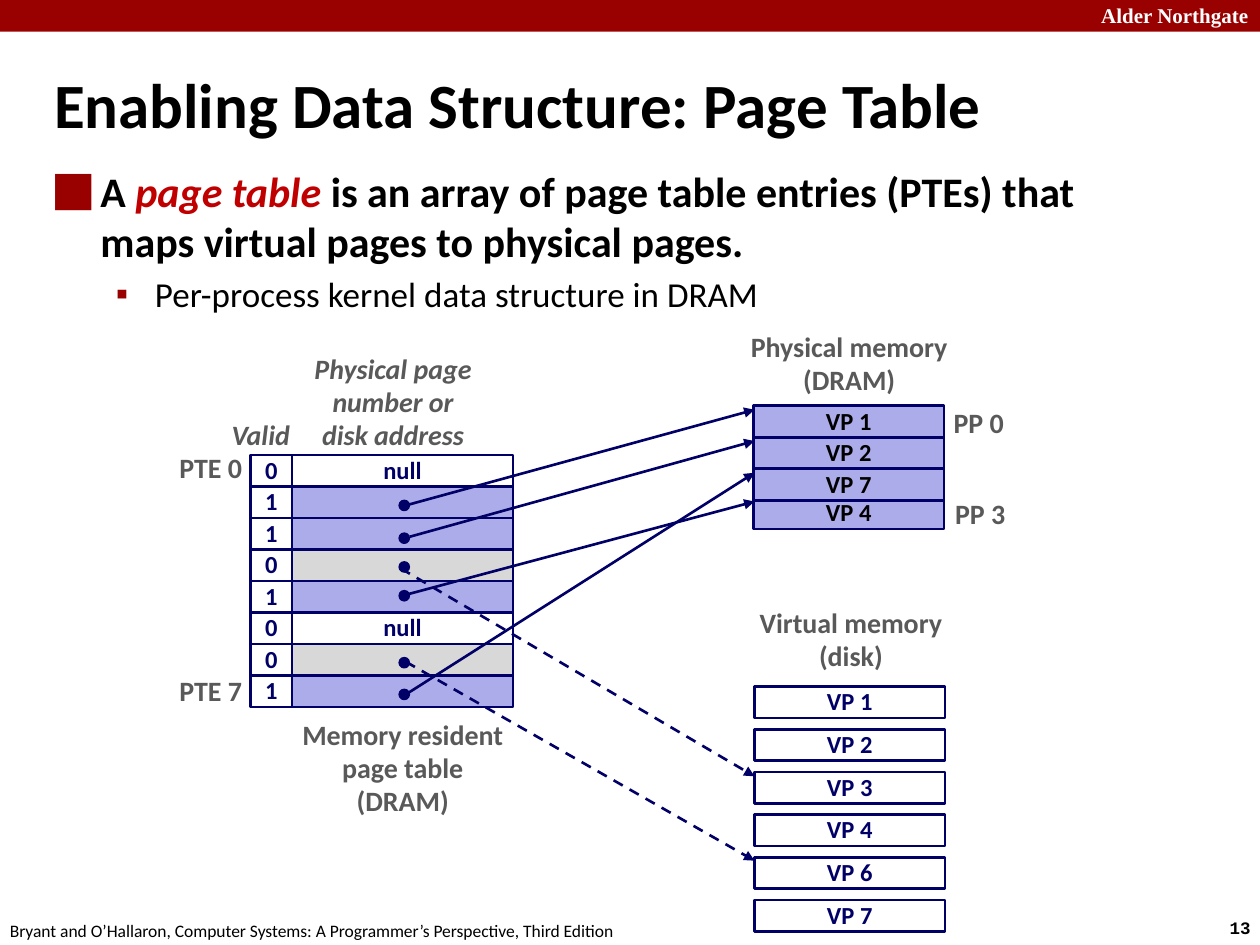
from pptx import Presentation
from pptx.dml.color import RGBColor as RGB
from pptx.enum.dml import MSO_LINE_DASH_STYLE as Dash
from pptx.enum.shapes import MSO_CONNECTOR as Conn, MSO_SHAPE as Kind
from pptx.enum.text import MSO_ANCHOR as Anchor, MSO_AUTO_SIZE as Auto, PP_ALIGN as Align
from pptx.oxml.ns import qn
from pptx.util import Cm, Pt
from lxml.etree import SubElement as Sub

# ---- Content (lengths in cm) ----
TITLE = "Enabling Data Structure: Page Table"
POINT = [("A ", False), ("page table ", True),
         ("is an array of page table entries (PTEs) that maps virtual "
          "pages to physical pages.", False)]
DETAIL = "Per-process kernel data structure in DRAM"

NAVY, RED, GREY, BLACK, WHITE = "000066", "990000", "595959", "000000", "FFFFFF"
FILL = {"null": WHITE, "memory": "ACACEA", "disk": "D8D8D8"}

# valid bit, where the page is, dot centre y
ENTRIES = [
    ("0", "null", None),
    ("1", "memory", 10.19),
    ("1", "memory", 10.85),
    ("0", "disk", 11.43),
    ("1", "memory", 12.01),
    ("0", "null", None),
    ("0", "disk", 13.36),
    ("1", "memory", 14.0),
]
FRAMES = [("VP 1", 8.18), ("VP 2", 8.81), ("VP 7", 9.45), ("VP 4", 10.03)]
PAGES = ["VP 1", "VP 2", "VP 3", "VP 4", "VP 6", "VP 7"]

# start x, start y, end y, dashed
ARROWS = [
    (8.1, 10.21, 8.26, False),
    (8.26, 10.82, 8.89, False),
    (8.08, 11.46, 15.65, True),
    (8.18, 11.99, 10.11, False),
    (8.18, 13.34, 17.35, True),
    (8.18, 14.0, 9.53, False),
]

# lines, box, alignment, italic
LABELS = [
    (["Valid"], (4.42, 8.33, 1.9, 0.94), Align.LEFT, True),
    (["Physical page", "number or", "disk address"],
     (6.07, 6.99, 3.71, 2.26), Align.CENTER, True),
    (["PTE 0"], (3.35, 8.99, 1.78, 0.94), Align.RIGHT, False),
    (["PTE 7"], (3.35, 13.49, 1.78, 0.94), Align.RIGHT, False),
    (["Memory resident", "page table", "(DRAM)"],
     (5.77, 14.38, 4.7, 2.26), Align.CENTER, False),
    (["Physical memory", "(DRAM)"], (14.86, 6.55, 4.52, 1.6), Align.CENTER, False),
    (["PP 0"], (18.97, 8.08, 1.52, 0.94), Align.CENTER, False),
    (["PP 3"], (19.0, 9.91, 1.52, 0.94), Align.CENTER, False),
    (["Virtual memory", "(disk)"], (15.01, 12.12, 4.29, 1.6), Align.CENTER, False),
]

# text, box, size, font, colour, bold
MARGINS = [
    ("Alder Northgate", (21.95, -0.08, 3.63, 0.76), 12, "Times New Roman", WHITE, True),
    ("13", (24.54, 18.36, 1.14, 0.69), 10, "Courier New", BLACK, True),
    ("Bryant and O’Hallaron, Computer Systems: A Programmer’s Perspective, "
     "Third Edition", (-0.05, 18.42, 12.9, 0.69), 10, "Calibri", BLACK, False),
]

# ---- Grid ----
ROW = 5.08 / len(ENTRIES)
TOP, BIT_X, BIT_W, PTE_X, PTE_W = 9.17, 5.05, 0.84, 5.89, 4.45
MEM_X, MEM_W, DISK_X, DISK_Y, STEP = 15.19, 3.84, 15.21, 13.84, 0.86
DOT_X, DOT, TIP_X = 8.15, 0.2, 15.21

deck = Presentation()
deck.slide_width, deck.slide_height = Cm(25.4), Cm(19.05)
slide = deck.slides.add_slide(deck.slide_layouts[1])
shapes = slide.shapes


# ---- Helpers ----
def color(target, code):
    target.rgb = RGB.from_string(code)


def style(run, size, code, bold=True, italic=False, face="Calibri"):
    font = run.font
    font.name, font.size, font.bold, font.italic = face, Pt(size), bold, italic
    color(font.color, code)


def write(shape, lines, size, code, align, spacing=None, **look):
    frame = shape.text_frame
    frame.text = "\n".join(lines)
    for para in frame.paragraphs:
        para.alignment, para.line_spacing = align, spacing
        for run in para.runs:
            style(run, size, code, **look)


def place(shape, box):
    shape.left, shape.top, shape.width, shape.height = map(Cm, box)


def solid(kind, box, fill, line=None, width=1.5):
    shape = shapes.add_shape(kind, *map(Cm, box))
    shape.shadow.inherit = False
    if fill:
        shape.fill.solid()
        color(shape.fill.fore_color, fill)
    else:
        shape.fill.background()
    if line:
        color(shape.line.color, line)
        shape.line.width = Pt(width)
    else:
        shape.line.fill.background()
    return shape


def cell(box, fill, text="", code=NAVY):
    shape = solid(Kind.RECTANGLE, box, fill, NAVY)
    shape.text_frame.word_wrap = False
    shape.text_frame.vertical_anchor = Anchor.MIDDLE
    if text:
        write(shape, [text], 14, code, Align.CENTER, 0.98)


def label(lines, box, size, code, align, spacing=None, **look):
    shape = shapes.add_textbox(*map(Cm, box))
    shape.text_frame.word_wrap = False
    write(shape, lines, size, code, align, spacing, **look)


def arrow(x, y, end, dashed):
    link = shapes.add_connector(Conn.STRAIGHT, Cm(x), Cm(y), Cm(TIP_X), Cm(end))
    color(link.line.color, NAVY)
    link.line.width = Pt(1.5)
    if dashed:
        link.line.dash_style = Dash.DASH
    Sub(link.line._get_or_add_ln(), qn("a:tailEnd"), type="triangle")
    Sub(link._element.spPr, qn("a:effectLst"))


def bullet(para, mark, left, hang):
    props = para._p.get_or_add_pPr()
    props.set("marL", str(Cm(left)))
    props.set("indent", str(-Cm(hang)))
    Sub(Sub(props, qn("a:buClr")), qn("a:srgbClr"), val=RED)
    Sub(props, qn("a:buChar"), char=mark)


# ---- Banner and footer ----
solid(Kind.RECTANGLE, (0, 0, 25.4, 0.64), RED)
for text, box, size, face, code, bold in MARGINS:
    label([text], box, size, code, Align.LEFT, face=face, bold=bold)

# ---- Title and list ----
title, body = shapes.title, slide.placeholders[1]
place(title, (0.84, 0.99, 23.01, 2.18))
title.text_frame.vertical_anchor = Anchor.MIDDLE
write(title, [TITLE], 36, BLACK, Align.LEFT)

place(body, (0.81, 3.2, 23.09, 3.58))
body.text_frame.auto_size = Auto.NONE
first = body.text_frame.paragraphs[0]
first.space_before = Pt(0)
for text, key in POINT:
    run = first.add_run()
    run.text = text
    style(run, 24, "C00000" if key else BLACK, italic=key)
second = body.text_frame.add_paragraph()
second.text, second.level, second.space_before = DETAIL, 1, Pt(4)
style(second.runs[0], 20, BLACK, bold=False)
bullet(first, "⬛", 0.96, 0.96)
bullet(second, "▪", 2.06, 0.79)

# ---- Page table ----
for i, (bit, state, _) in enumerate(ENTRIES):
    y = TOP + i * ROW
    cell((PTE_X, y, PTE_W, ROW), FILL[state], "null" if state == "null" else "")
    cell((BIT_X, y, BIT_W, ROW), None, bit)

# ---- Arrows and dots ----
for link in ARROWS:
    arrow(*link)
for _, _, y in ENTRIES:
    if y:
        solid(Kind.OVAL, (DOT_X - DOT / 2, y - DOT / 2, DOT, DOT), NAVY, NAVY, 1)

# ---- Physical and virtual memory ----
for name, y in reversed(FRAMES):
    cell((MEM_X, y, MEM_W, ROW), FILL["memory"], name, BLACK)
for i, name in enumerate(PAGES):
    cell((DISK_X, DISK_Y + i * STEP, MEM_W, ROW), WHITE, name)

# ---- Labels ----
for lines, box, align, italic in LABELS:
    label(lines, box, 16, GREY, align, 0.98, italic=italic)

deck.save("out.pptx")
